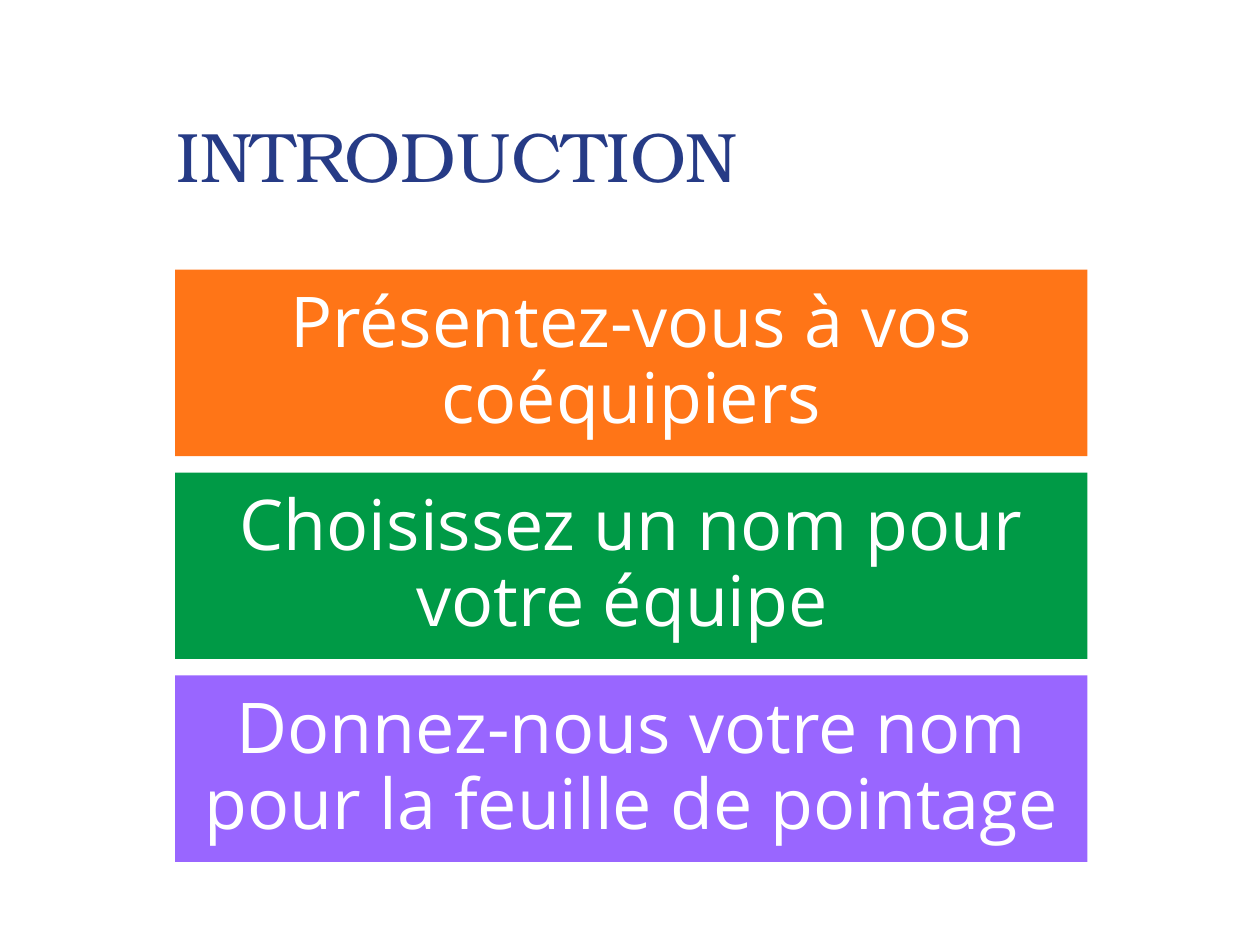
from dataclasses import dataclass

from pptx import Presentation
from pptx.dml.color import RGBColor
from pptx.enum.shapes import MSO_SHAPE
from pptx.enum.text import MSO_ANCHOR, MSO_AUTO_SIZE, PP_ALIGN
from pptx.slide import Slide
from pptx.util import Inches, Pt

RECTANGLE = MSO_SHAPE.RECTANGLE
MIDDLE, BOTTOM = MSO_ANCHOR.MIDDLE, MSO_ANCHOR.BOTTOM
LEFT, CENTER = PP_ALIGN.LEFT, PP_ALIGN.CENTER
NO_AUTOFIT = MSO_AUTO_SIZE.NONE
TITLE_ONLY = 5


@dataclass(frozen=True)
class Theme:
    title_font: str = "TeX Gyre Bonum"
    body_font: str = "Open Sans"
    text_size: Pt = Pt(40)
    title_color: RGBColor = RGBColor(0x26, 0x3B, 0x86)
    white: RGBColor = RGBColor(0xFF, 0xFF, 0xFF)
    orange: RGBColor = RGBColor(0xFF, 0x75, 0x17)
    green: RGBColor = RGBColor(0x00, 0x9A, 0x46)
    purple: RGBColor = RGBColor(0x99, 0x66, 0xFF)


@dataclass(frozen=True)
class Step:
    text: str
    color: RGBColor


THEME = Theme()
STEPS = [
    Step("Présentez-vous à vos coéquipiers", THEME.orange),
    Step("Choisissez un nom pour votre équipe ", THEME.green),
    Step("Donnez-nous votre nom pour la feuille de pointage", THEME.purple),
]
STEP_LEFT, STEP_TOP = 1.39, 2.14
STEP_WIDTH, STEP_HEIGHT = 7.24, 1.48
STEP_PITCH = 1.61
STEP_INSET = Inches(0.17)


def set_title(page: Slide, text: str) -> None:
    title = page.shapes.title
    title.left, title.top = Inches(1.3), Inches(0.35)
    title.width, title.height = Inches(6.33), Inches(1.26)
    frame = title.text_frame
    frame.text = text
    frame.auto_size = NO_AUTOFIT
    frame.vertical_anchor = BOTTOM
    para = frame.paragraphs[0]
    para.alignment = LEFT
    para.font.name = THEME.title_font
    para.font.size = THEME.text_size
    para.font.color.rgb = THEME.title_color


def add_step(page: Slide, step: Step, top: float) -> None:
    box = page.shapes.add_shape(
        RECTANGLE, Inches(STEP_LEFT), Inches(top), Inches(STEP_WIDTH), Inches(STEP_HEIGHT)
    )
    box.shadow.inherit = False
    box.fill.solid()
    box.fill.fore_color.rgb = step.color
    box.line.fill.background()

    frame = box.text_frame
    frame.text = step.text
    frame.word_wrap = True
    frame.vertical_anchor = MIDDLE
    frame.margin_left = frame.margin_right = STEP_INSET
    frame.margin_top = frame.margin_bottom = STEP_INSET
    para = frame.paragraphs[0]
    para.alignment = CENTER
    para.line_spacing = 0.9
    para.font.name = THEME.body_font
    para.font.size = THEME.text_size
    para.font.color.rgb = THEME.white


def main() -> None:
    deck = Presentation()
    deck.slide_width, deck.slide_height = Inches(10), Inches(7.5)
    page = deck.slides.add_slide(deck.slide_layouts[TITLE_ONLY])
    set_title(page, "INTRODUCTION")
    for index, step in enumerate(STEPS):
        add_step(page, step, STEP_TOP + index * STEP_PITCH)
    deck.save("out.pptx")


if __name__ == "__main__":
    main()
